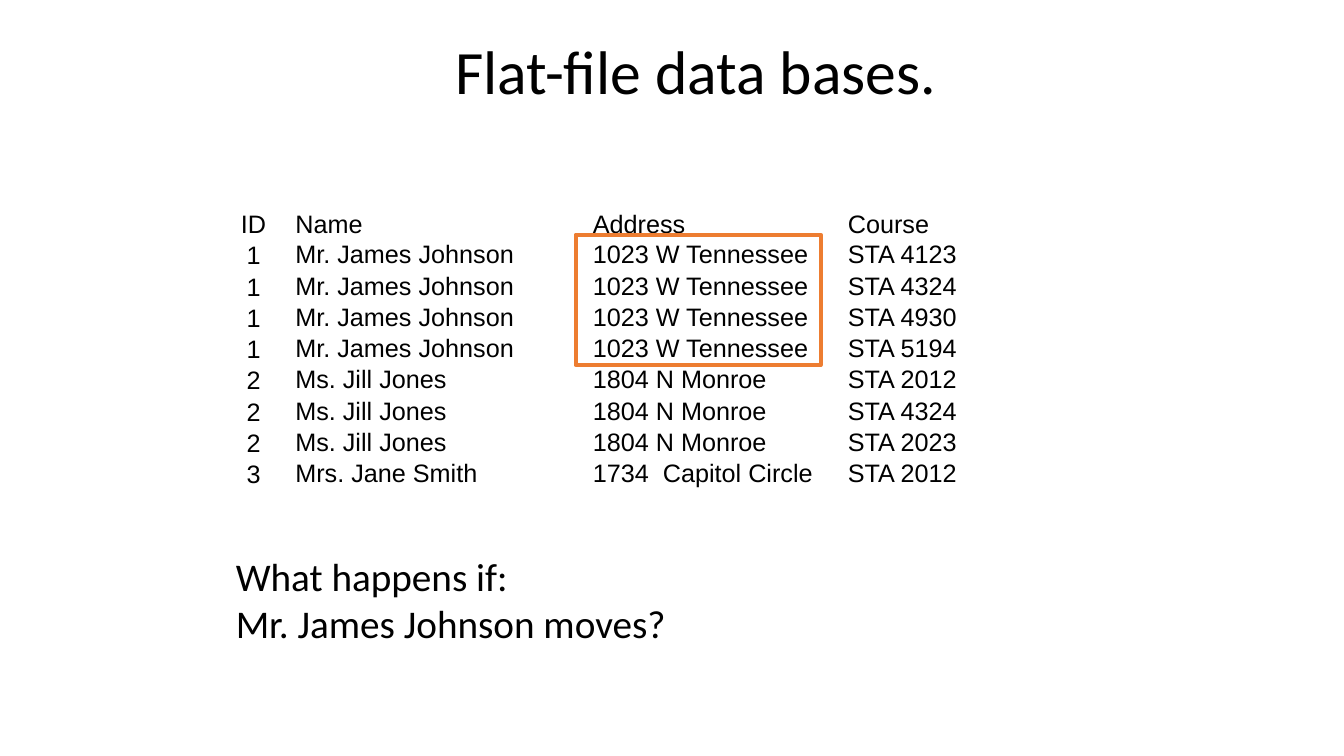
from dataclasses import dataclass

from pptx import Presentation
from pptx.dml.color import RGBColor as RGB
from pptx.enum.shapes import MSO_SHAPE as SHAPE
from pptx.enum.text import MSO_ANCHOR as ANCHOR, MSO_AUTO_SIZE as AUTO, PP_ALIGN as ALIGN
from pptx.util import Pt

PX = 9144  # EMU in one px, 100 px to the inch


@dataclass(frozen=True)
class Theme:
    text: RGB = RGB(0x00, 0x00, 0x00)
    accent: RGB = RGB(0xED, 0x7D, 0x31)
    body_font: str = "Calibri"
    table_font: str = "Arial"
    title_size: int = 44
    question_size: int = 28
    table_size: int = 18
    frame_width: int = 3


theme = Theme()


def box(left, top, width, height):
    return [n * PX for n in (left, top, width, height)]


def add_run(p, text, font, size):
    r = p.add_run()
    r.text = text
    r.font.name = font
    r.font.size = Pt(size)
    r.font.color.rgb = theme.text


prs = Presentation()
prs.slide_width, prs.slide_height = 1333 * PX, 750 * PX
s = prs.slides.add_slide(prs.slide_layouts[6])

# Title
tf = s.shapes.add_textbox(*box(442, 1, 520, 145)).text_frame
tf.word_wrap = True
tf.vertical_anchor = ANCHOR.MIDDLE
p = tf.paragraphs[0]
p.line_spacing = 0.9
add_run(p, "Flat-file data bases.", theme.body_font, theme.title_size)

# Enrolment table: each person is repeated for every course
people = [
    ("1", "Mr. James Johnson", "1023 W Tennessee", ["4123", "4324", "4930", "5194"]),
    ("2", "Ms. Jill Jones", "1804 N Monroe", ["2012", "4324", "2023"]),
    ("3", "Mrs. Jane Smith", "1734  Capitol Circle", ["2012"]),
]
rows = [("ID", "Name", "Address", "Course")]
for number, name, address, courses in people:
    rows += [(number, name, address, f"STA {course}") for course in courses]

col_widths = [81, 295, 253, 184]
header_height, row_height, table_height = 76, 22, 322
frame = s.shapes.add_table(len(rows), len(col_widths),
                           *box(211, 161, sum(col_widths), table_height))
table = frame.table
table.first_row = table.horz_banding = False
for col, width in zip(table.columns, col_widths):
    col.width = width * PX
for i, values in enumerate(rows):
    table.rows[i].height = (row_height if i else header_height) * PX
    for j, value in enumerate(values):
        cell = table.cell(i, j)
        cell.fill.background()
        cell.margin_left = cell.margin_top = cell.margin_right = PX
        cell.margin_bottom = 0
        cell.vertical_anchor = ANCHOR.MIDDLE if i and j else ANCHOR.BOTTOM
        p = cell.text_frame.paragraphs[0]
        p.alignment = ALIGN.LEFT if j else ALIGN.CENTER
        add_run(p, value, theme.table_font, theme.table_size)
frame.height = table_height * PX

# Question
tf = s.shapes.add_textbox(*box(224, 543, 451, 104)).text_frame
tf.word_wrap = False
tf.auto_size = AUTO.SHAPE_TO_FIT_TEXT
for i, line in enumerate(["What happens if:", "Mr. James Johnson moves?"]):
    p = tf.add_paragraph() if i else tf.paragraphs[0]
    add_run(p, line, theme.body_font, theme.question_size)

# Frame around the repeated address
sp = s.shapes.add_shape(SHAPE.RECTANGLE, *box(571, 233, 243, 129))
sp.shadow.inherit = False
sp.fill.background()
sp.line.color.rgb = theme.accent
sp.line.width = Pt(theme.frame_width)

prs.save("out.pptx")
